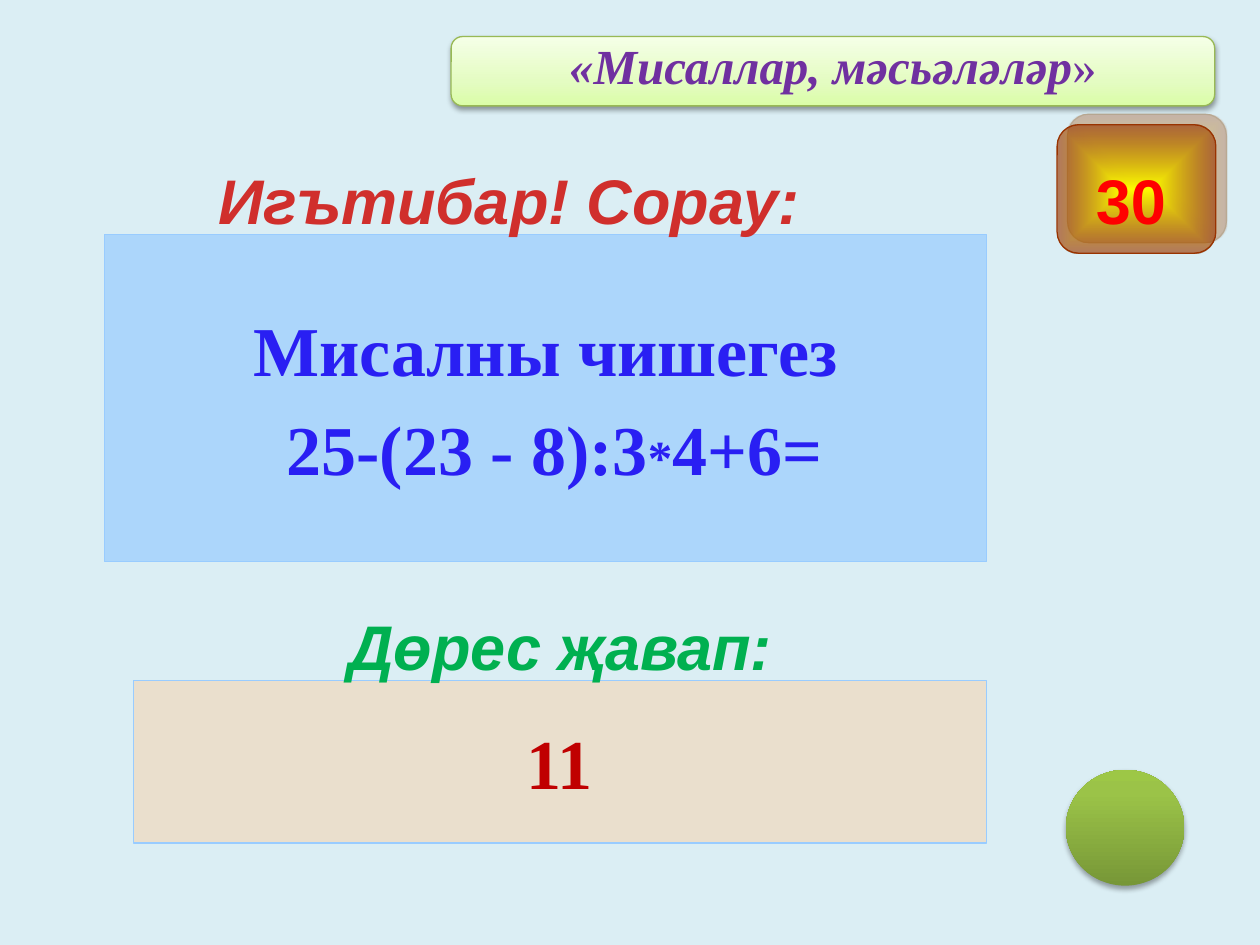
"""Build a quiz slide with a question, its answer and a score badge."""
from pptx import Presentation
from pptx.dml.color import RGBColor
from pptx.enum.shapes import MSO_SHAPE
from pptx.enum.text import MSO_ANCHOR, PP_ALIGN
from pptx.oxml import parse_xml
from pptx.oxml.ns import nsdecls, qn
from pptx.util import Pt

THEME = {
    "back": "DBEEF4", "line": "99CCFF", "sans": "Arial", "serif": "Times New Roman",
    "ask": "291FF3", "reply": "C00000", "alert": "D02F2C", "right": "00B050",
    "score": "FF0000", "topic": "7030A0",
    "big": 40, "head": 36, "small": 28, "gap": 9, "edge": 0.75,
}
ANGLE = '<a:lin ang="16200000" scaled="0"/>'
CENTRE = ('<a:path path="shape"><a:fillToRect l="50000" t="50000" '
          'r="50000" b="50000"/></a:path>')

SHAPES = [
    {"kind": MSO_SHAPE.OVAL, "at": (609.1, 439.9, 67.7, 66.2),
     "stops": [(0, "779737", 100), (80, "9BC348", 100), (100, "9DC746", 100)],
     "blend": ANGLE, "shade": ("000000", 35, 3.1, 1.8, 90)},
    {"kind": MSO_SHAPE.RECTANGLE, "at": (59.8, 133.9, 504, 187.2),
     "stops": [(0, "99CCFF", 70)], "line": THEME["line"],
     "font": "serif", "color": "ask", "gap": True,
     "text": [[("Мисалны чишегез", "big")],
              [(" 25-(23 - 8):3", "big"), ("*", "small"), ("4+6=", "big")]]},
    {"kind": MSO_SHAPE.RECTANGLE, "at": (76.3, 388.8, 487.4, 92.9),
     "stops": [(0, "FFCC99", 42)], "line": THEME["line"],
     "font": "serif", "color": "reply", "gap": True, "text": [[("11", "big")]]},
    {"at": (121.7, 343.4, 396.7, 28.8), "font": "sans", "color": "right",
     "slant": True, "text": [[("Дөрес җавап:", "head")]]},
    {"at": (70.6, 88.6, 430.6, 40.3), "font": "sans", "color": "alert",
     "slant": True, "text": [[(" Игътибар! Сорау:", "head")]]},
    {"kind": MSO_SHAPE.ROUNDED_RECTANGLE, "at": (604.1, 71.3, 90.7, 73.4),
     "stops": [(0, "FFFF00", 100), (100, "993300", 62)], "blend": CENTRE,
     "line": "993300", "shade": ("996633", 50, 0, 8.5, 315)},
    {"at": (616.2, 88.6, 60, 39.6), "font": "sans", "color": "score",
     "text": [[("30", "head")]]},
    {"kind": MSO_SHAPE.ROUNDED_RECTANGLE, "at": (257.8, 20.9, 436.3, 39.6),
     "stops": [(0, "DAFDA7", 100), (35, "E4FCC2", 100), (100, "F5FFE7", 100)],
     "blend": ANGLE, "line": "98B955", "shade": ("000000", 38, 3.1, 1.6, 90),
     "font": "serif", "color": "topic", "slant": True, "inset": (0, 7),
     "text": [[("«Мисаллар, мәсьәләләр", "small"), ("»", "small", "plain")]]},
]


def tint(color, alpha):
    return (f'<a:srgbClr val="{color}"><a:alpha val="{alpha * 1000}"/>'
            '</a:srgbClr>')


def paint(shape, stops, blend):
    if blend:
        marks = "".join(f'<a:gs pos="{at * 1000}">{tint(color, alpha)}</a:gs>'
                        for at, color, alpha in stops)
        fill = (f'<a:gradFill {nsdecls("a")} rotWithShape="1">'
                f'<a:gsLst>{marks}</a:gsLst>{blend}</a:gradFill>')
    else:
        fill = f'<a:solidFill {nsdecls("a")}>{tint(*stops[0][1:])}</a:solidFill>'
    shape.fill.background()
    props = shape._element.spPr
    props.replace(props.find(qn("a:noFill")), parse_xml(fill))


def shade(shape, color, alpha, blur, dist, angle):
    glow = parse_xml(
        f'<a:outerShdw {nsdecls("a")} blurRad="{Pt(blur)}" dist="{Pt(dist)}" '
        f'dir="{angle * 60000}" algn="ctr" rotWithShape="0">'
        f'{tint(color, alpha)}</a:outerShdw>')
    shape._element.spPr.find(qn("a:effectLst")).append(glow)


def write(shape, item):
    frame = shape.text_frame
    solid = "kind" in item
    frame.word_wrap = bool(item.get("gap"))
    frame.vertical_anchor = MSO_ANCHOR.MIDDLE if solid else MSO_ANCHOR.TOP
    if "inset" in item:
        frame.margin_top, frame.margin_bottom = map(Pt, item["inset"])
    for row, parts in enumerate(item["text"]):
        para = frame.add_paragraph() if row else frame.paragraphs[0]
        para.alignment = PP_ALIGN.CENTER
        if item.get("gap"):
            para.space_before = Pt(THEME["gap"])
        for words, size, *plain in parts:
            run = para.add_run()
            run.text = words
            font = run.font
            font.name, font.size = THEME[item["font"]], Pt(THEME[size])
            font.bold = not plain
            font.italic = bool(item.get("slant")) and not plain
            font.color.rgb = RGBColor.from_string(THEME[item["color"]])


def draw(slide, item):
    box = map(Pt, item["at"])
    if "kind" in item:
        shape = slide.shapes.add_shape(item["kind"], *box)
        shape.shadow.inherit = False
        paint(shape, item["stops"], item.get("blend"))
        if "line" in item:
            shape.line.color.rgb = RGBColor.from_string(item["line"])
            shape.line.width = Pt(THEME["edge"])
        else:
            shape.line.fill.background()
        if "shade" in item:
            shade(shape, *item["shade"])
    else:
        shape = slide.shapes.add_textbox(*box)
    if "text" in item:
        write(shape, item)


def main():
    deck = Presentation()
    deck.slide_width, deck.slide_height = Pt(720), Pt(540)
    slide = deck.slides.add_slide(deck.slide_layouts[6])
    slide.background.fill.solid()
    slide.background.fill.fore_color.rgb = RGBColor.from_string(THEME["back"])
    for item in SHAPES:
        draw(slide, item)
    deck.save("out.pptx")


if __name__ == "__main__":
    main()
